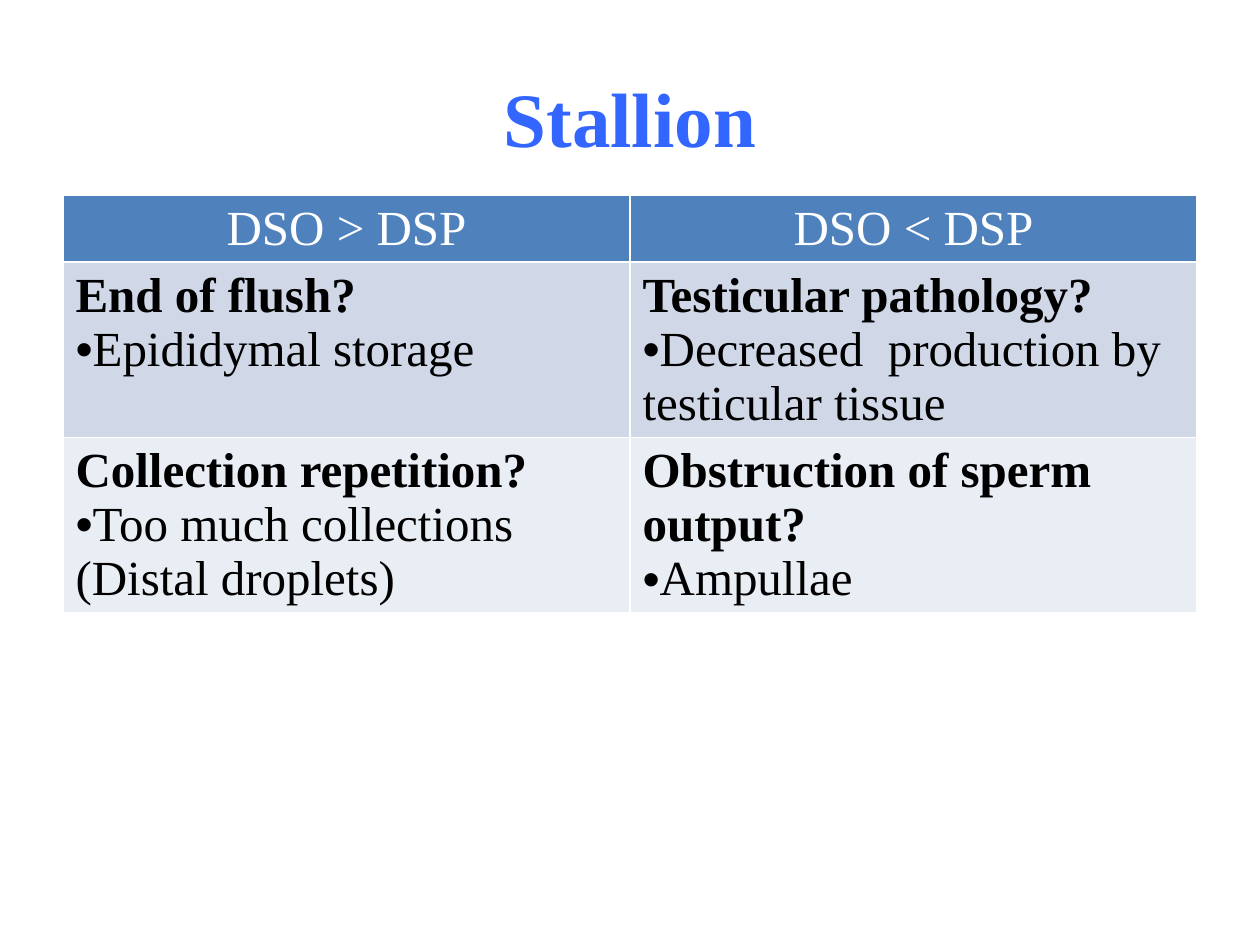
from lxml import etree
from pptx import Presentation
from pptx.dml.color import RGBColor
from pptx.enum import text
from pptx.oxml import ns
from pptx.util import Pt

COLORS = {
    "title": "3366FF",
    "header": "4F81BD",
    "header_text": "FFFFFF",
    "body_text": "000000",
    "bands": ["D0D8E8", "E9EDF4"],
}


class SlideBuilder:
    def __init__(self, slide, font):
        self.slide = slide
        self.font = font

    def line(self, paragraph, words, size, color, bold=False, centred=False):
        paragraph.text = words
        if centred:
            paragraph.alignment = text.PP_ALIGN.CENTER
        for run in paragraph.runs:
            run.font.name = self.font
            run.font.size = Pt(size)
            run.font.bold = bold
            run.font.color.rgb = RGBColor.from_string(color)

    def bullet(self, paragraph):
        properties = paragraph._p.get_or_add_pPr()
        etree.SubElement(properties, ns.qn("a:buFont"), typeface="Arial")
        etree.SubElement(properties, ns.qn("a:buChar"), char="•")

    def title(self, words, left, top, width, height):
        heading = self.slide.shapes.title
        heading.left, heading.top = Pt(left), Pt(top)
        heading.width, heading.height = Pt(width), Pt(height)
        heading.text_frame.vertical_anchor = text.MSO_ANCHOR.MIDDLE
        self.line(heading.text_frame.paragraphs[0], words, 44,
                  COLORS["title"], bold=True, centred=True)

    def fill(self, cell, color):
        cell.fill.solid()
        cell.fill.fore_color.rgb = RGBColor.from_string(color)

    def table(self, headers, findings, left, top, width, row_heights):
        grid = self.slide.shapes.add_table(
            len(row_heights), len(headers), Pt(left), Pt(top),
            Pt(width), Pt(sum(row_heights))).table
        for row, height in zip(grid.rows, row_heights):
            row.height = Pt(height)

        # Header row
        for column, header in enumerate(headers):
            cell = grid.cell(0, column)
            self.fill(cell, COLORS["header"])
            self.line(cell.text_frame.paragraphs[0], header, 28,
                      COLORS["header_text"], centred=True)

        # Each finding is a bold question with a bulleted cause
        for index, row in enumerate(findings):
            for column, (question, cause) in enumerate(row):
                cell = grid.cell(index + 1, column)
                self.fill(cell, COLORS["bands"][index % 2])
                frame = cell.text_frame
                self.line(frame.paragraphs[0], question, 28,
                          COLORS["body_text"], bold=True)
                cause_line = frame.add_paragraph()
                self.line(cause_line, cause, 28, COLORS["body_text"])
                self.bullet(cause_line)


def main():
    deck = Presentation()
    deck.slide_width, deck.slide_height = Pt(720), Pt(540)
    title_only = deck.slide_layouts[5]
    builder = SlideBuilder(deck.slides.add_slide(title_only), "Times New Roman")

    builder.title("Stallion", 36, 21.6, 648, 90)
    builder.table(
        ["DSO > DSP", "DSO < DSP"],
        [
            [("End of flush?", "Epididymal storage"),
             ("Testicular pathology?",
              "Decreased  production by testicular tissue")],
            [("Collection repetition?",
              "Too much collections (Distal droplets)"),
             ("Obstruction of sperm output?", "Ampullae")],
        ],
        36, 111.6, 648, [37.8, 100, 100])
    deck.save("out.pptx")


if __name__ == "__main__":
    main()
